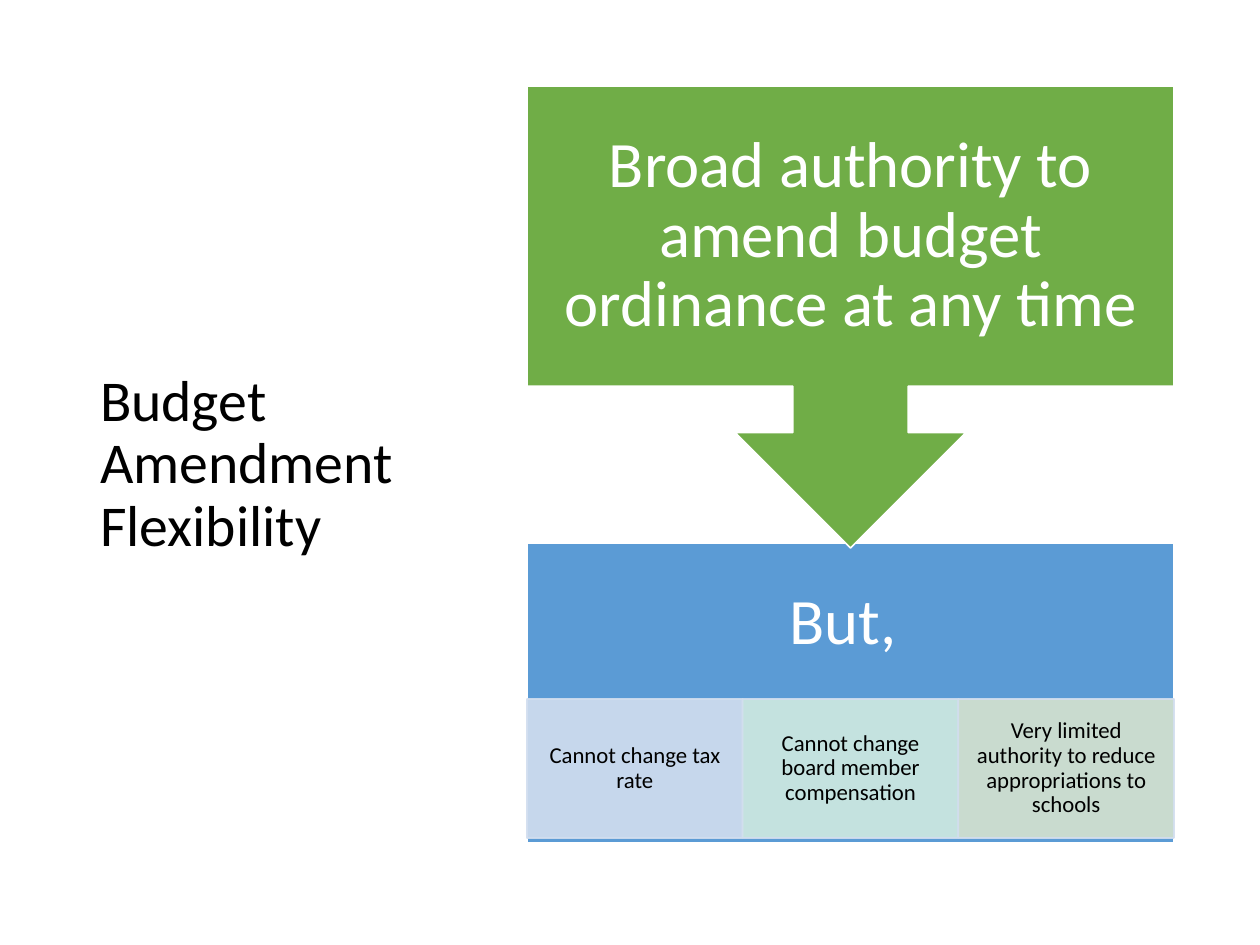
import pptx
import pptx.util
import pptx.dml.color
import pptx.enum.shapes
import pptx.enum.text
import pptx.oxml.ns
import lxml.etree

RGB = pptx.dml.color.RGBColor
SHAPE = pptx.enum.shapes.MSO_SHAPE
ALIGN = pptx.enum.text.PP_ALIGN

WHITE = RGB(0xFF, 0xFF, 0xFF)
BLACK = RGB(0x00, 0x00, 0x00)
GREEN = RGB(0x70, 0xAD, 0x47)
BLUE = RGB(0x5B, 0x9B, 0xD5)
PALE = RGB(0xD2, 0xDE, 0xEF)
MINT = RGB(0xD0, 0xEA, 0xE1)
SAGE = RGB(0xD5, 0xE3, 0xCF)

LIMITS = [
    ("Cannot change tax rate", PALE),
    ("Cannot change board member compensation", MINT),
    ("Very limited authority to reduce appropriations to schools", SAGE),
]


def px(n):
    """Turn px (126 to the inch) into EMU."""
    return round(n * 914400 / 126)


def fade(fill, percent):
    """Set the opacity of a solid fill element."""
    color = fill.find(pptx.oxml.ns.qn("a:srgbClr"))
    alpha = lxml.etree.SubElement(color, pptx.oxml.ns.qn("a:alpha"))
    alpha.set("val", str(percent * 1000))


def block(slide, kind, box, fill, line=WHITE):
    shape = slide.shapes.add_shape(kind, *map(px, box))
    shape.shadow.inherit = False
    shape.fill.solid()
    shape.fill.fore_color.rgb = fill
    shape.line.color.rgb = line
    shape.line.width = pptx.util.Pt(1)
    return shape


def write(shape, text, size, color, pad, align=ALIGN.CENTER):
    frame = shape.text_frame
    frame.word_wrap = True
    frame.vertical_anchor = pptx.enum.text.MSO_ANCHOR.MIDDLE
    frame.margin_left = frame.margin_right = px(pad[0])
    frame.margin_top = frame.margin_bottom = px(pad[1])
    para = frame.paragraphs[0]
    para.text = text
    para.alignment = align
    para.line_spacing = 0.9
    para.font.name = "Calibri"
    para.font.size = pptx.util.Pt(size)
    para.font.color.rgb = color


def label(slide, box, *style):
    write(slide.shapes.add_textbox(*map(px, box)), *style)


def title(slide, box):
    label(slide, box, "Budget Amendment Flexibility", 33, BLACK,
          (13, 6), ALIGN.LEFT)


def limits(slide, box):
    """Row of equal cells, slightly see-through."""
    left, top, width, height = box
    edges = [left + width * i / len(LIMITS) for i in range(len(LIMITS) + 1)]
    for (text, fill), start, end in zip(LIMITS, edges, edges[1:]):
        cell = block(slide, SHAPE.RECTANGLE,
                     (start, top, end - start, height), fill, PALE)
        for solid in cell._element.spPr.iter(pptx.oxml.ns.qn("a:solidFill")):
            fade(solid, 90)
        write(cell, text, 13, BLACK, (13, 3))


def caveat(slide, box):
    """Blue panel: heading above the row of limits."""
    left, top, width, height = box
    block(slide, SHAPE.RECTANGLE, box, BLUE)
    label(slide, (left, top, width, 162), "But, ", 37, WHITE, (37, 37))
    limits(slide, (left, top + 156, width, 139))


def power(slide, box):
    """Green callout whose arrow points down."""
    left, top, width, height = box
    block(slide, SHAPE.UP_ARROW_CALLOUT, box, GREEN).rotation = 180
    label(slide, (left, top, width, 300),
          "Broad authority to amend budget ordinance at any time",
          37, WHITE, (37, 37))


def main():
    deck = pptx.Presentation()
    deck.slide_width, deck.slide_height = px(1260), px(945)
    slide = deck.slides.add_slide(deck.slide_layouts[6])
    title(slide, (87, 86, 349, 758))
    caveat(slide, (527, 543, 647, 300))
    power(slide, (527, 86, 647, 462))
    deck.save("out.pptx")


if __name__ == "__main__":
    main()
